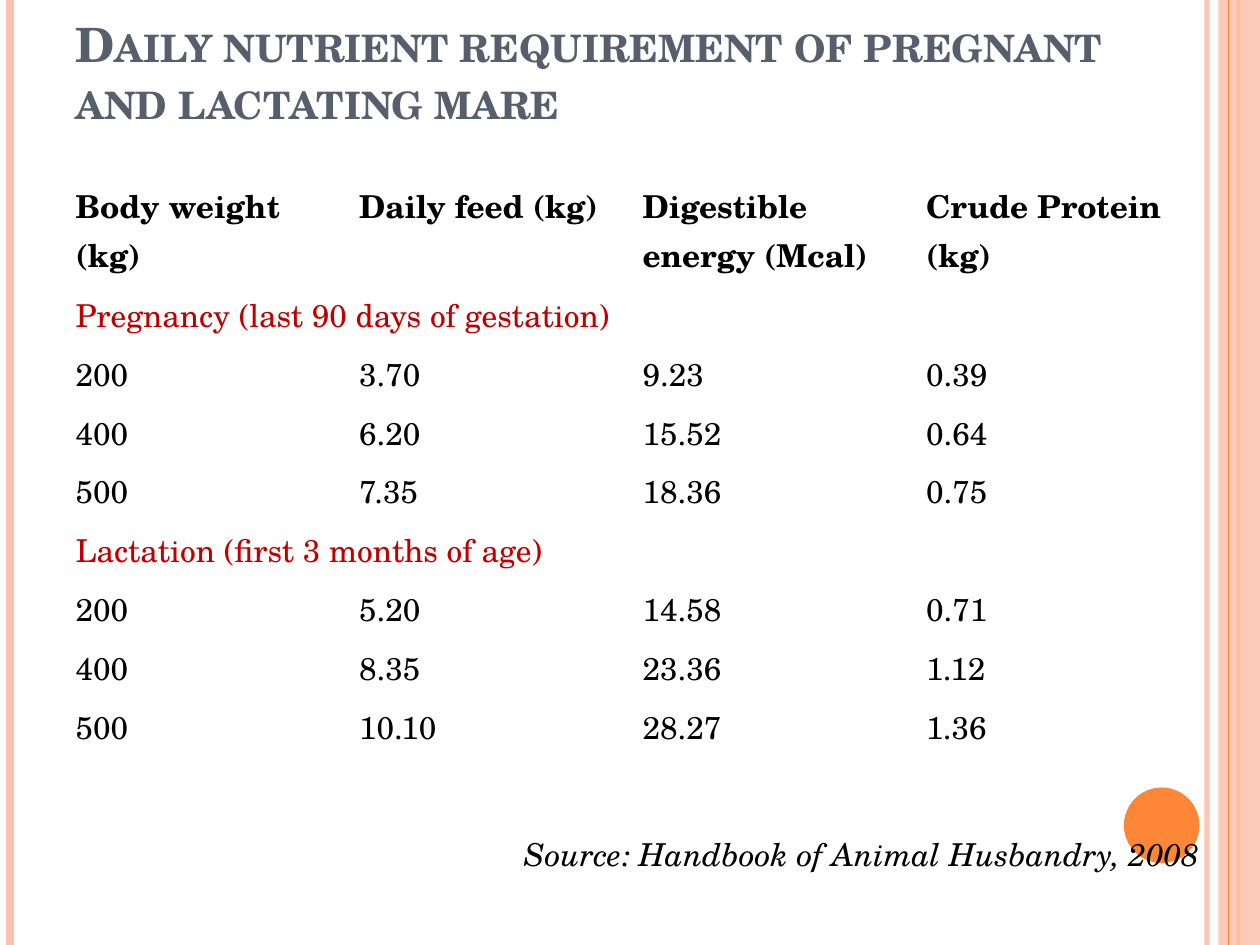
import lxml.etree
import pptx
import pptx.dml.color
import pptx.enum.shapes
import pptx.enum.text
import pptx.oxml.ns
import pptx.util

PEACH = pptx.dml.color.RGBColor(0xFE, 0xC3, 0xAE)
ORANGE = pptx.dml.color.RGBColor(0xFE, 0x86, 0x37)
SLATE = pptx.dml.color.RGBColor(0x57, 0x5F, 0x6D)
BLACK = pptx.dml.color.RGBColor(0x00, 0x00, 0x00)
RED = pptx.dml.color.RGBColor(0xC0, 0x00, 0x00)
FONT = "TeX Gyre Schola"
inches = pptx.util.Inches
qualified = pptx.oxml.ns.qn

presentation = pptx.Presentation()
presentation.slide_width = inches(10)
presentation.slide_height = inches(7.5)
slide = presentation.slides.add_slide(presentation.slide_layouts[5])
shapes = slide.shapes


def add_rule(x, color, width, opacity=100):
    rule = shapes.add_connector(
        pptx.enum.shapes.MSO_CONNECTOR.STRAIGHT,
        inches(x), 0, inches(x), presentation.slide_height)
    rule.line.color.rgb = color
    rule.line.width = pptx.util.Pt(width)
    properties = rule._element.spPr
    lxml.etree.SubElement(properties, qualified("a:effectLst"))
    if opacity < 100:
        swatch = next(properties.iter(qualified("a:srgbClr")))
        lxml.etree.SubElement(swatch, qualified("a:alpha"), val=str(opacity * 1000))


def write(text_frame, text, size, color, **formats):
    run = text_frame.paragraphs[0].add_run()
    run.text = text
    run.font.color.rgb = color
    formats = {"name": FONT, "size": pptx.util.Pt(size), **formats}
    for attribute, value in formats.items():
        setattr(run.font, attribute, value)
    return run


for x, color, width, opacity in [
    (9.58, PEACH, 3, 93), (0.08, PEACH, 4.5, 100), (9.83, ORANGE, 1.5, 100),
]:
    add_rule(x, color, width, opacity)

kinds = pptx.enum.shapes.MSO_SHAPE
for kind, box, color, opacity in [
    (kinds.RECTANGLE, (9.67, 0, 0.33, 7.5), PEACH, 87),
    (kinds.OVAL, (8.92, 6.25, 0.6, 0.6), ORANGE, 100),
]:
    shape = shapes.add_shape(kind, *map(inches, box))
    shape.shadow.inherit = False
    shape.line.fill.background()
    shape.fill.solid()
    shape.fill.fore_color.rgb = color
    if opacity < 100:
        swatch = next(shape._element.spPr.iter(qualified("a:srgbClr")))
        lxml.etree.SubElement(swatch, qualified("a:alpha"), val=str(opacity * 1000))

add_rule(9.75, ORANGE, 0.75)

margin = presentation.slide_width // 20
content_width = presentation.slide_width - 2 * margin

title = shapes.title
title.left, title.top = margin, inches(0.3)
title.width, title.height = content_width, inches(0.77)
title.text_frame.auto_size = pptx.enum.text.MSO_AUTO_SIZE.NONE
title.text_frame.vertical_anchor = pptx.enum.text.MSO_ANCHOR.BOTTOM
title.text_frame.paragraphs[0].alignment = pptx.enum.text.PP_ALIGN.LEFT
title_run = write(
    title.text_frame, "Daily nutrient requirement of pregnant and lactating mare",
    27, SLATE, bold=True)
title_run._r.get_or_add_rPr().set("cap", "small")

rows = [
    ["Body weight (kg)", "Daily feed (kg)", "Digestible energy (Mcal)", "Crude Protein (kg)"],
    ["Pregnancy (last 90 days of gestation)"],
    ["200", "3.70", "9.23", "0.39"],
    ["400", "6.20", "15.52", "0.64"],
    ["500", "7.35", "18.36", "0.75"],
    ["Lactation (first 3 months of age)"],
    ["200", "5.20", "14.58", "0.71"],
    ["400", "8.35", "23.36", "1.12"],
    ["500", "10.10", "28.27", "1.36"],
]
column_count = len(rows[0])
header_height, row_height = inches(0.76), inches(0.44)
table = shapes.add_table(
    len(rows), column_count, margin, inches(1.39), content_width,
    header_height + row_height * (len(rows) - 1)).table
table.first_row = table.horz_banding = False
for row_index, values in enumerate(rows):
    is_header = row_index == 0
    is_section = len(values) == 1
    table.rows[row_index].height = header_height if is_header else row_height
    for cell in table.rows[row_index].cells:
        cell.fill.background()
    if is_section:
        table.cell(row_index, 0).merge(table.cell(row_index, column_count - 1))
    for column_index, value in enumerate(values):
        write(table.cell(row_index, column_index).text_frame, value, 18,
              RED if is_section else BLACK, bold=is_header)

source = shapes.add_textbox(*map(inches, (4.06, 6.58, 5.67, 0.4)))
source.text_frame.word_wrap = True
source.text_frame.auto_size = pptx.enum.text.MSO_AUTO_SIZE.SHAPE_TO_FIT_TEXT
write(source.text_frame, "Source: Handbook of Animal Husbandry, 2008", 18, BLACK, italic=True)

presentation.save("out.pptx")
